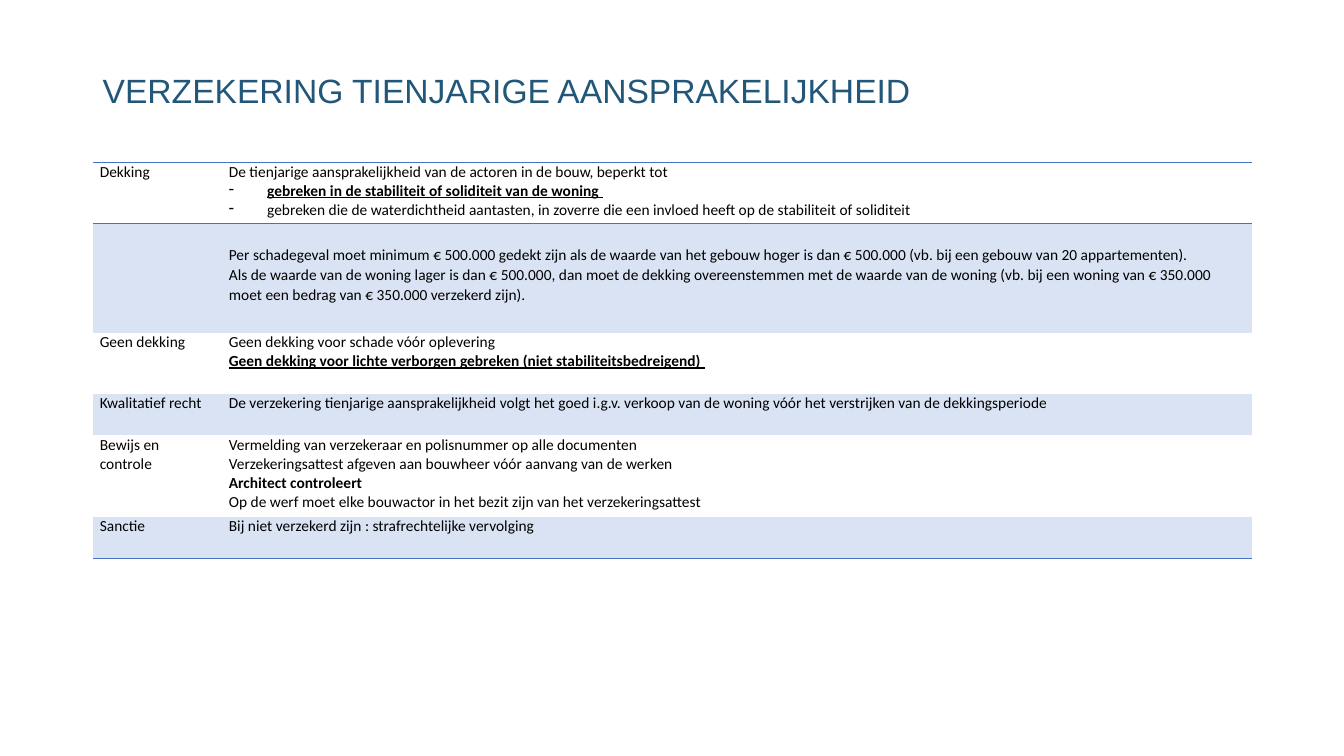
import pptx
import pptx.util
import pptx.dml.color
import pptx.enum.text
import pptx.oxml
import pptx.oxml.ns

Inches = pptx.util.Inches
Pt = pptx.util.Pt
RGBColor = pptx.dml.color.RGBColor
MIDDLE = pptx.enum.text.MSO_ANCHOR.MIDDLE

TEAL = RGBColor(0x22, 0x57, 0x7A)
BLUE = RGBColor(0x44, 0x72, 0xC4)
PALE = RGBColor(0xDA, 0xE3, 0xF3)
BLACK = RGBColor(0, 0, 0)

PLAIN, BOLD, LINED, DASH = "plain", "bold", "lined", "dash"
COLS = [1.28, 10.22]
HEIGHTS = [0.61, 1.08, 0.61, 0.41, 0.81, 0.41]
ROWS = [
    ("Dekking", [
        ("De tienjarige aansprakelijkheid van de actoren in de bouw, beperkt tot", {PLAIN}),
        ("gebreken in de stabiliteit of soliditeit van de woning ", {BOLD, LINED, DASH}),
        ("gebreken die de waterdichtheid aantasten, in zoverre die een invloed heeft op de stabiliteit of soliditeit", {DASH}),
    ]),
    ("", [
        ("Per schadegeval moet minimum € 500.000 gedekt zijn als de waarde van het gebouw hoger is dan € 500.000 (vb. bij een gebouw van 20 appartementen).", {PLAIN}),
        ("Als de waarde van de woning lager is dan € 500.000, dan moet de dekking overeenstemmen met de waarde van de woning (vb. bij een woning van € 350.000 moet een bedrag van € 350.000 verzekerd zijn).", {PLAIN}),
    ]),
    ("Geen dekking", [
        ("Geen dekking voor schade vóór oplevering", {PLAIN}),
        ("Geen dekking voor lichte verborgen gebreken (niet stabiliteitsbedreigend) ", {BOLD, LINED}),
    ]),
    ("Kwalitatief recht", [
        ("De verzekering tienjarige aansprakelijkheid volgt het goed i.g.v. verkoop van de woning vóór het verstrijken van de dekkingsperiode", {PLAIN}),
    ]),
    ("Bewijs en controle", [
        ("Vermelding van verzekeraar en polisnummer op alle documenten", {PLAIN}),
        ("Verzekeringsattest afgeven aan bouwheer vóór aanvang van de werken", {PLAIN}),
        ("Architect controleert", {BOLD}),
        ("Op de werf moet elke bouwactor in het bezit zijn van het verzekeringsattest", {PLAIN}),
    ]),
    ("Sanctie", [
        ("Bij niet verzekerd zijn : strafrechtelijke vervolging", {PLAIN}),
    ]),
]


def add_run(para, text, font, size, color):
    run = para.add_run()
    run.text = text
    run.font.name = font
    run.font.size = Pt(size)
    run.font.color.rgb = color
    return run


def add_title(slide, text):
    box = slide.shapes.add_textbox(Inches(0.92), Inches(0.65), Inches(11.5), Inches(0.53))
    frame = box.text_frame
    frame.word_wrap = True
    frame.vertical_anchor = MIDDLE
    para = frame.paragraphs[0]
    para.line_spacing = 0.9
    add_run(para, text, "Arial", 24, TEAL)


def set_dash(para):
    props = para._p.get_or_add_pPr()
    props.set("marL", str(Inches(0.38)))
    props.set("indent", str(-Inches(0.38)))
    mark = pptx.oxml.parse_xml(f'<a:buChar {pptx.oxml.ns.nsdecls("a")} char="-"/>')
    props.append(mark)


def set_edges(cell, sides):
    props = cell._tc.get_or_add_tcPr()
    for side in "LRTB":
        fill = f'<a:solidFill><a:srgbClr val="{BLUE}"/></a:solidFill>' if side in sides else "<a:noFill/>"
        props.append(pptx.oxml.parse_xml(
            f'<a:ln{side} {pptx.oxml.ns.nsdecls("a")} w="{Pt(1)}">{fill}</a:ln{side}>'))


def fill_cell(cell, lines, shade, sides, top=0, space=None):
    cell.margin_left = cell.margin_right = Inches(0.07)
    cell.margin_top, cell.margin_bottom = Inches(top), 0
    set_edges(cell, sides)
    if shade:
        cell.fill.solid()
        cell.fill.fore_color.rgb = PALE
    else:
        cell.fill.background()
    frame = cell.text_frame
    for i, (text, style) in enumerate(lines):
        para = frame.add_paragraph() if i else frame.paragraphs[0]
        if space:
            para.line_spacing = space
        if DASH in style:
            set_dash(para)
        if not text:
            para.font.size = Pt(11)
            continue
        run = add_run(para, text, "Calibri", 11, BLACK)
        run.font.bold = BOLD in style
        run.font.underline = LINED in style


def add_grid(slide):
    frame = slide.shapes.add_table(
        len(ROWS), len(COLS), Inches(0.92), Inches(1.61), Inches(sum(COLS)), Inches(sum(HEIGHTS)))
    table = frame.table
    table.first_row = table.horz_banding = False
    for col, width in zip(table.columns, COLS):
        col.width = Inches(width)
    edges = {0: "TB", 1: "T", len(ROWS) - 1: "B"}
    for i, (label, lines) in enumerate(ROWS):
        table.rows[i].height = Inches(HEIGHTS[i])
        shade, sides = i % 2 == 1, edges.get(i, "")
        top, space = (0, None) if label else (0.2, 1.07)
        fill_cell(table.cell(i, 0), [(label, {PLAIN})], shade, sides)
        fill_cell(table.cell(i, 1), lines, shade, sides, top, space)


def main():
    deck = pptx.Presentation()
    deck.slide_width, deck.slide_height = Inches(13.33), Inches(7.5)
    slide = deck.slides.add_slide(deck.slide_layouts[6])
    add_title(slide, "VERZEKERING TIENJARIGE AANSPRAKELIJKHEID")
    add_grid(slide)
    deck.save("out.pptx")


if __name__ == "__main__":
    main()
